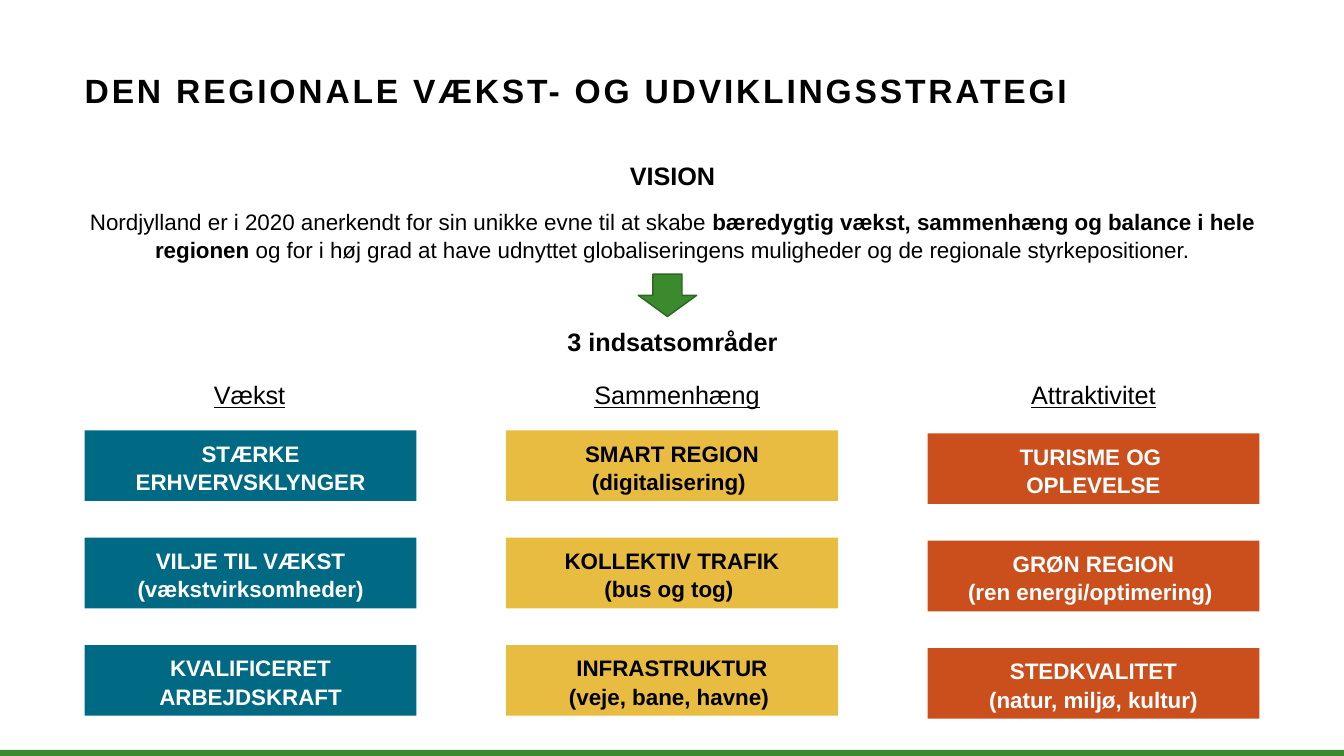
from pptx import Presentation
from pptx.dml.color import RGBColor
from pptx.enum import shapes, text
from pptx.util import Inches, Pt

FONT = "Arial"
COLORS = {
    "black": "000000", "white": "FFFFFF", "green": "3C8A2E", "dark_green": "2C6622",
    "teal": "006983", "yellow": "E7BC40", "orange": "CA4F1C",
}
BOX_LEFT, BOX_STEP, BOX_WIDTH, BOX_HEIGHT = 0.84, 4.18, 3.29, 0.7
ROW_STEP = 2.13 / 2

# heading, heading left, first box top, fill, text colour, boxes (one string per paragraph)
AREAS = [
    ("Vækst", 1.15, 4.27, "teal", "white", [
        ["STÆRKE ERHVERVSKLYNGER"],
        ["VILJE TIL VÆKST (vækstvirksomheder)"],
        ["KVALIFICERET ARBEJDSKRAFT"]]),
    ("Sammenhæng", 5.39, 4.27, "yellow", "black", [
        ["SMART REGION (digitalisering) "],
        ["KOLLEKTIV TRAFIK", "(bus og tog) "],
        ["INFRASTRUKTUR", "(veje, bane, havne) "]]),
    ("Attraktivitet", 9.52, 4.3, "orange", "white", [
        ["TURISME OG ", "OPLEVELSE"],
        ["GRØN REGION", "(ren energi/optimering) "],
        ["STEDKVALITET", "(natur, miljø, kultur)"]]),
]


def rgb(name):
    return RGBColor.from_string(COLORS[name])


def place(shape, left, top, width, height):
    shape.left, shape.top = Inches(left), Inches(top)
    shape.width, shape.height = Inches(width), Inches(height)


def set_frame(tf, inset=0, anchor=text.MSO_ANCHOR.TOP):
    tf.word_wrap = True
    tf.auto_size = text.MSO_AUTO_SIZE.NONE
    tf.vertical_anchor = anchor
    tf.margin_left = tf.margin_right = tf.margin_top = tf.margin_bottom = Inches(inset)


def add_run(p, words, size=16, color="black", bold=False, underline=False, spacing=None):
    r = p.add_run()
    r.text = words
    f = r.font
    f.name, f.size, f.bold, f.underline = FONT, Pt(size), bold, underline
    f.color.rgb = rgb(color)
    if spacing is not None:
        r._r.get_or_add_rPr().set("spc", str(spacing * 100))


def write(tf, paragraphs, align=text.PP_ALIGN.CENTER, line=1.05, before=(), **style):
    """Each paragraph is a string or a list of (words, bold) runs; before lists space in points."""
    for i, content in enumerate(paragraphs):
        p = tf.paragraphs[0] if i == 0 else tf.add_paragraph()
        p.alignment, p.line_spacing = align, line
        p.space_before = Pt(before[i] if before else 0)
        p.space_after = Pt(0)
        # Bullets inherited from the template's body list are switched off.
        pPr = p._p.get_or_add_pPr()
        pPr.set("marL", "0")
        pPr.set("indent", "0")
        pPr.append(pPr.makeelement(
            "{http://schemas.openxmlformats.org/drawingml/2006/main}buNone", {}))
        if isinstance(content, str):
            add_run(p, content, **style)
        else:
            for words, fmt in content:
                add_run(p, words, **{**style, **fmt})


def add_filled(s, kind, box, fill, outline=None):
    sp = s.shapes.add_shape(kind, *map(Inches, box))
    sp.shadow.inherit = False
    sp.fill.solid()
    sp.fill.fore_color.rgb = rgb(fill)
    if outline:
        sp.line.color.rgb = rgb(outline)
        sp.line.width = Pt(1)
    else:
        sp.line.fill.background()
    return sp


def add_heading(s, words, left):
    tb = s.shapes.add_textbox(Inches(left), Inches(3.75), Inches(2.65), Inches(0.3))
    set_frame(tb.text_frame)
    write(tb.text_frame, [words], size=18, underline=True)


def add_area(s, column, heading, heading_left, top, fill, color, boxes):
    add_heading(s, heading, heading_left)
    for row, lines in enumerate(boxes):
        box = (BOX_LEFT + column * BOX_STEP, top + row * ROW_STEP, BOX_WIDTH, BOX_HEIGHT)
        sp = add_filled(s, shapes.MSO_SHAPE.RECTANGLE, box, fill)
        set_frame(sp.text_frame, inset=0.08)
        write(sp.text_frame, lines, color=color, bold=True)


def fill_title(s):
    title = s.shapes.title
    place(title, 0.84, 0.35, 11.65, 0.75)
    set_frame(title.text_frame, anchor=text.MSO_ANCHOR.BOTTOM)
    write(title.text_frame, ["DEN REGIONALE VÆKST- OG UDVIKLINGSSTRATEGI"],
          align=text.PP_ALIGN.LEFT, line=0.9, size=24, bold=True, spacing=2)


def fill_vision(s):
    body = s.placeholders[1]
    place(body, 0.6, 1.58, 12.14, 5.43)
    set_frame(body.text_frame)
    large, strong = {"size": 18, "bold": True}, {"bold": True}
    write(body.text_frame, [
        [("VISION", large)],
        [("Nordjylland er i 2020 anerkendt for sin unikke evne til at skabe ", {}),
         ("bæredygtig vækst, sammenhæng og balance i hele regionen ", strong),
         ("og for i høj grad at have udnyttet globaliseringens muligheder "
          "og de regionale styrkepositioner.", {})],
        [("3 indsatsområder", large)],
    ], before=(0, 11, 44))


def main():
    prs = Presentation()
    prs.slide_width, prs.slide_height = Inches(13.33), Inches(7.5)
    s = prs.slides.add_slide(prs.slide_layouts[1])
    fill_title(s)
    fill_vision(s)
    add_filled(s, shapes.MSO_SHAPE.RECTANGLE, (0, 7.44, 13.33, 0.06), "green")
    add_filled(s, shapes.MSO_SHAPE.DOWN_ARROW, (6.33, 2.72, 0.58, 0.42), "green", "dark_green")
    for column, area in enumerate(AREAS):
        add_area(s, column, *area)
    prs.save("out.pptx")


if __name__ == "__main__":
    main()
